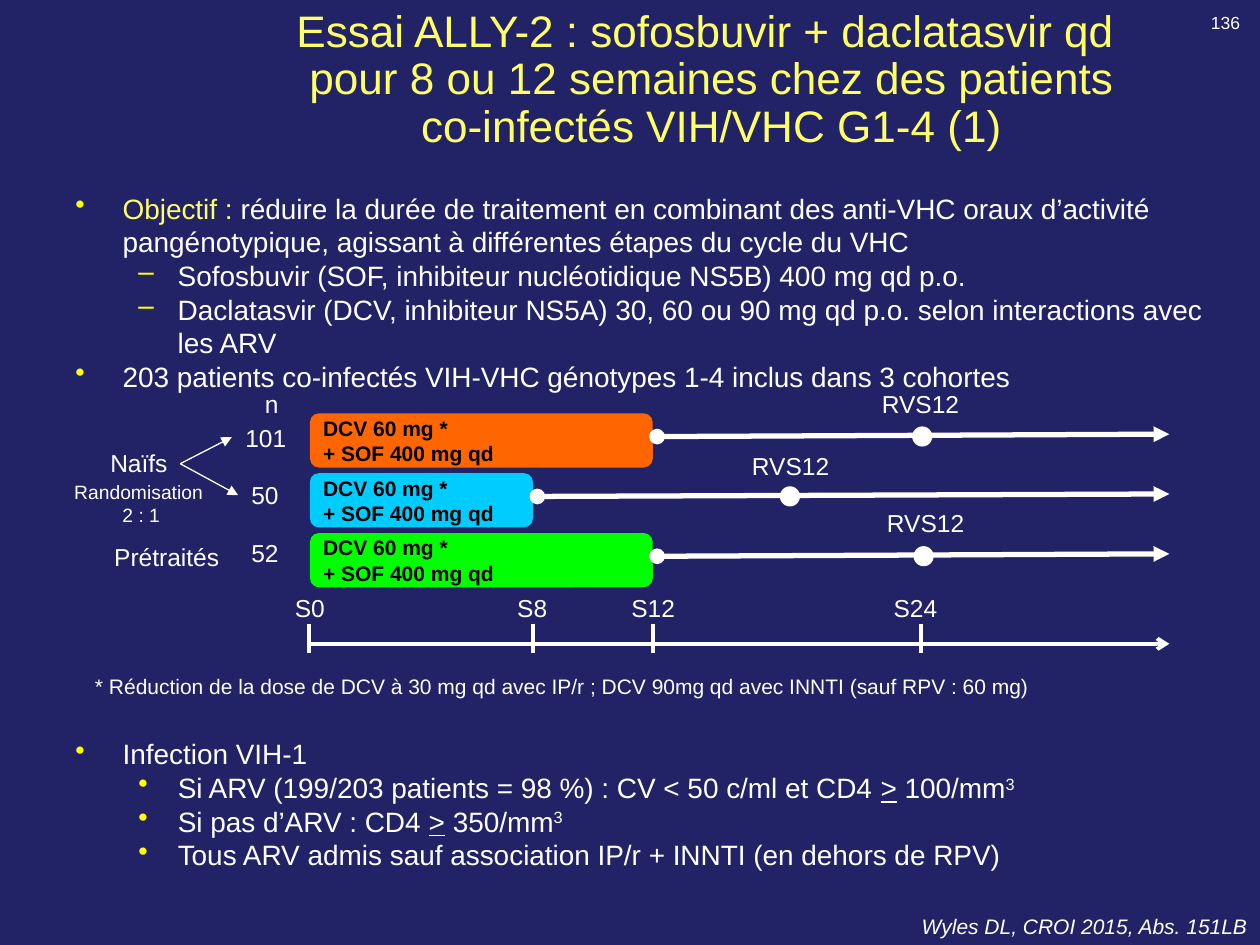
from lxml.etree import SubElement
from pptx import Presentation
from pptx.dml.color import RGBColor
from pptx.enum.shapes import MSO_CONNECTOR, MSO_SHAPE
from pptx.enum.text import MSO_ANCHOR, PP_ALIGN
from pptx.oxml.ns import qn
from pptx.util import Pt

COLORS = {
    "navy": "222267", "white": "FFFFFF", "black": "000000", "title": "FFFF66",
    "bullet": "FFFF00", "orange": "FF6600", "blue": "00CCFF", "green": "00FF00",
}
LEFT, CENTER, RIGHT = PP_ALIGN.LEFT, PP_ALIGN.CENTER, PP_ALIGN.RIGHT

TITLE = ("Essai ALLY-2 : sofosbuvir + daclatasvir qd \n"
         "pour 8 ou 12 semaines chez des patients\n"
         "co-infectés VIH/VHC G1-4 (1)")

# Paragraphs: level, bullet, spans of (text, format)
UNDER, SUPER = {"underline": True}, {"baseline": 30}
DESIGN = [
    (0, "•", [("Objectif : ", {"color": "title"}),
              ("réduire la durée de traitement en combinant des anti-VHC oraux d’activité "
               "pangénotypique, agissant à différentes étapes du cycle du VHC", {})]),
    (1, "–", [("Sofosbuvir (SOF, inhibiteur nucléotidique NS5B) 400 mg qd p.o.", {})]),
    (1, "–", [("Daclatasvir (DCV, inhibiteur NS5A) 30, 60 ou 90 mg qd p.o. "
               "selon interactions avec les ARV", {})]),
    (0, "•", [("203 patients co-infectés VIH-VHC génotypes 1-4 inclus dans 3 cohortes", {})]),
]
INFECTION = [
    (0, "•", [("Infection VIH-1", {})]),
    (1, "•", [("Si ARV (199/203 patients = 98 %) : CV < 50 c/ml et CD4 ", {}),
              (">", UNDER), (" 100/mm", {}), ("3", SUPER)]),
    (1, "•", [("Si pas d’ARV : CD4 ", {}), (">", UNDER), (" 350/mm", {}), ("3", SUPER)]),
    (1, "•", [("Tous ARV admis sauf association IP/r + INNTI (en dehors de RPV)", {})]),
]
INDENTS = [(27, -27), (58.5, -22.5)]  # left margin and hanging indent by level

TREATMENT = "DCV 60 mg *\n+ SOF 400 mg qd"
# Bar colour, treatment end, centre of the RVS12 dot, left and top of its label
ARMS = [
    ("orange", "S12", 527, 496.8, 218.9),
    ("blue", "S8", 451.4, 422.6, 254.2),
    ("green", "S12", 527.8, 499.7, 286.6),
]
# Tick position and label centre of each week
WEEKS = {"S0": (176.4, 177.1), "S8": (304.6, 304.2), "S12": (373, 373.3), "S24": (526.3, 523.1)}

# Text, left, top, width, height, format
LABELS = [
    ("Naïfs", 55.4, 252.7, 47.5, 24.5, {"align": RIGHT}),
    ("Prétraités", 57.6, 306, 74.9, 24.5, {"align": RIGHT}),
    ("n", 144, 218.9, 22.3, 24.5, {"align": RIGHT}),
    ("101", 132.5, 238.3, 38.2, 24.5, {"align": RIGHT}),
    ("50", 136.1, 270.7, 30.2, 24.5, {"align": RIGHT}),
    ("52", 136.1, 303.8, 30.2, 24.5, {"align": RIGHT}),
    ("Randomisation \n2 : 1", 34.6, 270.7, 92.2, 33.8, {"align": CENTER, "size": 11}),
    ("136", 684.7, 3.6, 31, 19.4, {"align": RIGHT, "size": 10}),
    (" * Réduction de la dose de DCV à 30 mg qd avec IP/r ; DCV 90mg qd avec INNTI "
     "(sauf RPV : 60 mg)", 43.9, 381.6, 640, 21.6, {"size": 12, "wrap": True}),
    ("Wyles DL, CROI 2015, Abs. 151LB", 499, 518.4, 221, 21.6,
     {"align": RIGHT, "size": 12, "italic": True, "wrap": True}),
]

BAR_TOP, BAR_PITCH, BAR_LEFT, BAR_HEIGHT = 236.2, 34.2, 177.1, 31
AXIS_END, AXIS_Y, DOT = 668.2, 367.9, 11.5


def rgb(name):
    return RGBColor.from_string(COLORS[name])


def add_text(para, text, size=14, color="white", bold=False, italic=False,
             underline=False, baseline=0):
    """Add text to a paragraph; a newline becomes a line break, baseline is in percent."""
    for index, line in enumerate(text.split("\n")):
        if index:
            para.add_line_break()
        span = para.add_run()
        span.text = line
        font = span.font
        font.name, font.size, font.bold, font.italic = "Arial", Pt(size), bold, italic
        font.color.rgb = rgb(color)
        if underline:
            font.underline = True
        if baseline:
            font._element.set("baseline", str(baseline * 1000))


def add_label(page, text, left, top, width, height, align=LEFT, wrap=False, **style):
    box = page.shapes.add_textbox(Pt(left), Pt(top), Pt(width), Pt(height))
    box.text_frame.word_wrap = wrap
    para = box.text_frame.paragraphs[0]
    para.alignment = align
    add_text(para, text, **style)


def add_bullets(page, items, left, top, width, height):
    box = page.shapes.add_textbox(Pt(left), Pt(top), Pt(width), Pt(height))
    frame = box.text_frame
    frame.word_wrap = True
    for index, (level, bullet, spans) in enumerate(items):
        para = frame.add_paragraph() if index else frame.paragraphs[0]
        para.level = level
        margin, indent = INDENTS[level]
        properties = para._p.get_or_add_pPr()
        properties.set("marL", str(Pt(margin)))
        properties.set("indent", str(Pt(indent)))
        color = SubElement(properties, qn("a:buClr"))
        SubElement(color, qn("a:srgbClr"), val=COLORS["bullet"])
        SubElement(properties, qn("a:buChar"), char=bullet)
        for text, style in spans:
            add_text(para, text, size=16, **style)


def add_line(page, x1, y1, x2, y2, width=2.25, head=None, tail=None):
    line = page.shapes.add_connector(MSO_CONNECTOR.STRAIGHT, Pt(x1), Pt(y1), Pt(x2), Pt(y2))
    line.line.color.rgb = rgb("white")
    line.line.width = Pt(width)
    properties = line._element.spPr
    outline = properties.find(qn("a:ln"))
    for tag, kind in (("a:headEnd", head), ("a:tailEnd", tail)):
        if kind:
            SubElement(outline, qn(tag), type=kind)
    SubElement(properties, qn("a:effectLst"))


def add_filled(page, kind, left, top, width, height, color):
    shape = page.shapes.add_shape(kind, Pt(left), Pt(top), Pt(width), Pt(height))
    shape.shadow.inherit = False
    shape.fill.solid()
    shape.fill.fore_color.rgb = rgb(color)
    shape.line.fill.background()
    return shape


def add_title(page):
    title = page.shapes.title
    title.left, title.top, title.width, title.height = Pt(110.2), Pt(9.4), Pt(592.6), Pt(73.4)
    title.text_frame.vertical_anchor = MSO_ANCHOR.MIDDLE
    para = title.text_frame.paragraphs[0]
    para.alignment, para.line_spacing = CENTER, 0.9
    add_text(para, TITLE, size=25.2, color="title")
    for span in para.runs:
        effects = span.font._element.find(qn("a:solidFill"))
        shadow_list = SubElement(span.font._element, qn("a:effectLst"))
        effects.addnext(shadow_list)
        shadow = SubElement(shadow_list, qn("a:outerShdw"), dist=str(Pt(2)), dir="2700000")
        SubElement(shadow, qn("a:srgbClr"), val=COLORS["black"])


def add_arm(page, index, color, end_week, dot_x, label_left, label_top):
    top = BAR_TOP + index * BAR_PITCH
    end = WEEKS[end_week][0]
    bar = add_filled(page, MSO_SHAPE.ROUNDED_RECTANGLE, BAR_LEFT, top, end - BAR_LEFT,
                     BAR_HEIGHT, color)
    frame = bar.text_frame
    frame.vertical_anchor = MSO_ANCHOR.MIDDLE
    frame.margin_left = Pt(6)
    frame.margin_right = frame.margin_top = frame.margin_bottom = Pt(3)
    frame.paragraphs[0].alignment = LEFT
    add_text(frame.paragraphs[0], TREATMENT, size=12, color="black", bold=True)
    add_line(page, end + 2.5, top + 13.3, AXIS_END, top + 11.9, 3, "oval", "triangle")
    add_filled(page, MSO_SHAPE.OVAL, dot_x - DOT / 2, top + 7.5, DOT, DOT, "white")
    add_label(page, "RVS12", label_left, label_top, 59, 24.5)


def main():
    deck = Presentation()
    deck.slide_width, deck.slide_height = Pt(720), Pt(540)
    page = deck.slides.add_slide(deck.slide_layouts[5])
    page.background.fill.solid()
    page.background.fill.fore_color.rgb = rgb("navy")
    add_title(page)
    add_bullets(page, DESIGN, 36, 105.8, 669.6, 125)
    add_bullets(page, INFECTION, 36, 417.6, 680.4, 97.2)
    for index, arm in enumerate(ARMS):
        add_arm(page, index, *arm)
    add_line(page, 175.7, AXIS_Y, AXIS_END, AXIS_Y, tail="arrow")
    for week, (tick, center) in WEEKS.items():
        add_line(page, tick, 356.4, tick, 373)
        add_label(page, week, center - 22, 335.5, 44, 24.5, align=CENTER)
    for end_x, end_y in ((132.5, 249.8), (136.1, 283)):
        add_line(page, 103, 265, end_x, end_y, 0.75, tail="triangle")
    for text, left, top, width, height, style in LABELS:
        add_label(page, text, left, top, width, height, **style)
    deck.save("out.pptx")


if __name__ == "__main__":
    main()
